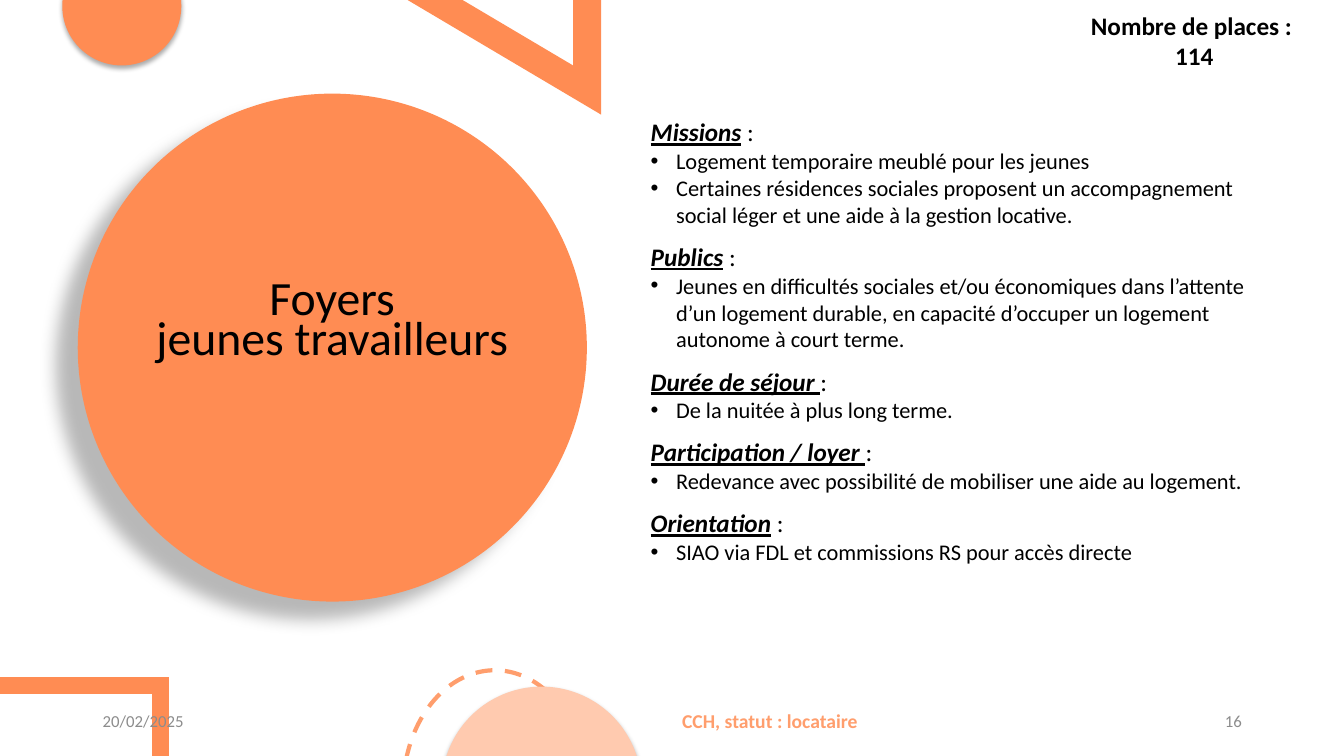
from lxml.etree import SubElement
from pptx import Presentation
from pptx.dml.color import RGBColor
from pptx.enum.dml import MSO_LINE
from pptx.enum.shapes import MSO_SHAPE
from pptx.enum.text import MSO_ANCHOR, MSO_AUTO_SIZE, PP_ALIGN
from pptx.oxml.ns import qn
from pptx.util import Cm, Pt

ORANGE = RGBColor(0xFF, 0x8C, 0x53)
LIGHT_ORANGE = RGBColor(0xFF, 0x9E, 0x6D)
PEACH = RGBColor(0xFF, 0xCA, 0xAF)
BLACK = RGBColor(0, 0, 0)
GREY = RGBColor(0x8C, 0x8C, 0x8C)
FONT = "Calibri"

SOFT_SHADOW = (32, 3.5, 2.2, 90)
WIDE_SHADOW = (28, 11.8, 19.7, 141)

FOOTER_TOP, FOOTER_HEIGHT = 17.65, 1.02

SECTIONS = [
    ("Missions", " :", [
        "Logement temporaire meublé pour les jeunes",
        "Certaines résidences sociales proposent un accompagnement "
        "social léger et une aide à la gestion locative.",
    ]),
    ("Publics", " :", [
        "Jeunes en difficultés sociales et/ou économiques dans l’attente "
        "d’un logement durable, en capacité d’occuper un logement "
        "autonome à court terme.",
    ]),
    ("Durée de séjour ", ":", ["De la nuitée à plus long terme."]),
    ("Participation / loyer ", ":", [
        "Redevance avec possibilité de mobiliser une aide au logement.",
    ]),
    ("Orientation", " :", ["SIAO via FDL et commissions RS pour accès directe"]),
]


def add_shadow(sp, alpha, blur, distance, angle):
    """Lengths in points, alpha in percent, angle in degrees."""
    effects = sp._element.spPr.find(qn("a:effectLst"))
    shadow = SubElement(effects, qn("a:outerShdw"), blurRad=str(Pt(blur)),
                        dist=str(Pt(distance)), dir=str(angle * 60000),
                        algn="ctr", rotWithShape="0")
    color = SubElement(shadow, qn("a:srgbClr"), val=str(BLACK))
    SubElement(color, qn("a:alpha"), val=str(alpha * 1000))


def add_figure(s, kind, box, fill=None, line=None, width=1, shadow=None):
    sp = s.shapes.add_shape(kind, *map(Cm, box))
    sp.shadow.inherit = False
    if fill is None:
        sp.fill.background()
    else:
        sp.fill.solid()
        sp.fill.fore_color.rgb = fill
    if line is None:
        sp.line.fill.background()
    else:
        sp.line.color.rgb = line
        sp.line.width = Pt(width)
        SubElement(sp.line._ln, qn("a:miter"), lim="800000")
    if shadow:
        add_shadow(sp, *shadow)
    return sp


def add_run(p, text, size, color=BLACK, bold=False, italic=False, underline=False):
    r = p.add_run()
    r.text = text
    f = r.font
    f.name, f.size, f.color.rgb = FONT, Pt(size), color
    f.bold, f.italic, f.underline = bold, italic, underline


def next_paragraph(tf):
    """Return the first paragraph while it is empty, then new ones."""
    first = tf.paragraphs[0]
    return tf.add_paragraph() if first.runs else first


def add_text_frame(s, box, anchor=MSO_ANCHOR.TOP):
    tf = s.shapes.add_textbox(*map(Cm, box)).text_frame
    tf.word_wrap = True
    tf.vertical_anchor = anchor
    return tf


def add_lines(tf, lines, size, color=BLACK, bold=False, align=PP_ALIGN.LEFT,
              spacing=None):
    for text in lines:
        p = next_paragraph(tf)
        p.alignment = align
        p.line_spacing = spacing
        add_run(p, text, size, color, bold)


def add_title(s, box, lines):
    """Place the title placeholder in front of the shapes drawn so far."""
    sp = s.shapes.title
    sp.left, sp.top, sp.width, sp.height = map(Cm, box)
    s.shapes._spTree.append(sp._element)
    tf = sp.text_frame
    tf.word_wrap = True
    tf.auto_size = MSO_AUTO_SIZE.NONE
    tf.vertical_anchor = MSO_ANCHOR.TOP
    add_lines(tf, lines, 34.1, align=PP_ALIGN.CENTER, spacing=0.7)


def add_bullet(tf, text):
    p = next_paragraph(tf)
    pPr = p._p.get_or_add_pPr()
    pPr.set("marL", str(Cm(0.64)))
    pPr.set("indent", str(-Cm(0.64)))
    SubElement(pPr, qn("a:buFont"), typeface="Arial")
    SubElement(pPr, qn("a:buChar"), char="•")
    add_run(p, text, 16)


def add_sections(s, box):
    tf = add_text_frame(s, box)
    for i, (heading, colon, items) in enumerate(SECTIONS):
        p = next_paragraph(tf)
        p.line_spacing = 0.9
        p.space_before = Pt(12 if i else 10)
        add_run(p, heading, 18, bold=True, italic=True, underline=True)
        add_run(p, colon, 18)
        for item in items:
            add_bullet(tf, item)


def add_footer(s, left, width, text, size=12, color=GREY, **style):
    tf = add_text_frame(s, (left, FOOTER_TOP, width, FOOTER_HEIGHT),
                        MSO_ANCHOR.MIDDLE)
    add_lines(tf, [text], size, color, **style)


def main():
    prs = Presentation()
    prs.slide_width, prs.slide_height = Cm(33.87), Cm(19.05)
    s = prs.slides.add_slide(prs.slide_layouts[5])

    dashed = add_figure(s, MSO_SHAPE.OVAL, (10.16, 16.89, 4.62, 6.02),
                        line=LIGHT_ORANGE, width=3)
    dashed.line.dash_style = MSO_LINE.DASH
    add_figure(s, MSO_SHAPE.OVAL, (1.96, 2.36, 12.83, 12.8), ORANGE,
               shadow=WIDE_SHADOW)
    add_title(s, (3.48, 7.01, 9.78, 3.48), ["Foyers", "jeunes travailleurs"])
    add_sections(s, (16.15, 2.9, 16.08, 11.71))

    places = add_text_frame(s, (26.34, 0.13, 7.52, 1.8))
    add_lines(places, ["Nombre de places : ", "114"], 18, bold=True,
              align=PP_ALIGN.CENTER)

    add_figure(s, MSO_SHAPE.OVAL, (1.57, -1.35, 3, 3), ORANGE,
               shadow=SOFT_SHADOW)
    add_figure(s, MSO_SHAPE.OVAL, (11.15, 17.32, 5, 5), PEACH, PEACH,
               shadow=SOFT_SHADOW)
    triangle = add_figure(s, MSO_SHAPE.ISOSCELES_TRIANGLE,
                          (8.64, -3.89, 6.68, 5.64), line=ORANGE, width=20)
    triangle.rotation = 270
    add_figure(s, MSO_SHAPE.RECTANGLE, (-0.89, 17.27, 4.93, 3.56),
               line=ORANGE, width=12)

    add_footer(s, 2.34, 7.62, "20/02/2025")
    add_footer(s, 16.94, 11.96, "CCH, statut : locataire", 14, LIGHT_ORANGE,
               bold=True)
    add_footer(s, 23.93, 7.62, "16", align=PP_ALIGN.RIGHT)

    prs.save("out.pptx")


if __name__ == "__main__":
    main()
